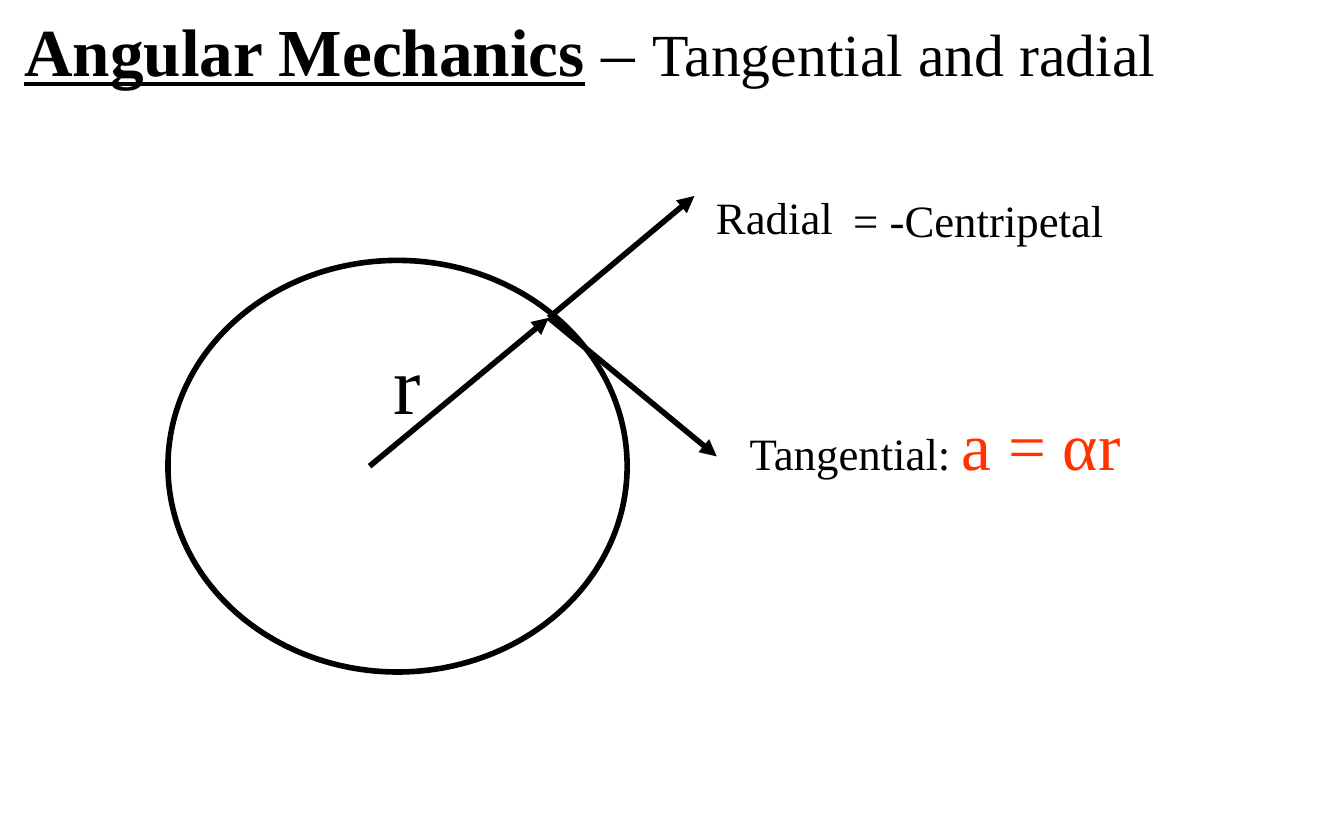
from lxml import etree
from pptx import Presentation
from pptx.dml.color import RGBColor
from pptx.enum.shapes import MSO_CONNECTOR, MSO_SHAPE
from pptx.enum.text import MSO_AUTO_SIZE
from pptx.oxml.ns import qn
from pptx.util import Pt

STRAIGHT = MSO_CONNECTOR.STRAIGHT
OVAL = MSO_SHAPE.OVAL
GROW = MSO_AUTO_SIZE.SHAPE_TO_FIT_TEXT

PX = 9525  # EMU per px, 96 px to the inch

THEME = {
    "font": "Times New Roman",
    "ink": RGBColor(0x00, 0x00, 0x00),
    "paper": RGBColor(0xFF, 0xFF, 0xFF),
    "accent": RGBColor(0xFF, 0x33, 0x00),
    "line": Pt(3),
    "title": {"size": Pt(36), "bold": True, "underline": True},
    "dash": {"size": Pt(36)},
    "subtitle": {"size": Pt(32)},
    "label": {"size": Pt(24)},
    "formula": {"size": Pt(36)},
    "space": {"size": Pt(18)},
    "radius": {"size": Pt(44)},
}


def add_label(shapes, box, runs):
    label = shapes.add_textbox(*(v * PX for v in box))
    frame = label.text_frame
    frame.word_wrap = False
    frame.auto_size = GROW
    for text, style in runs:
        run = frame.paragraphs[0].add_run()
        run.text = text
        for name, value in {"name": THEME["font"], **THEME[style]}.items():
            setattr(run.font, name, value)
        run.font.color.rgb = THEME["accent" if style == "formula" else "ink"]


def add_arrow(shapes, start, end):
    arrow = shapes.add_connector(STRAIGHT, *(v * PX for v in start + end))
    arrow.line.color.rgb = THEME["ink"]
    arrow.line.width = THEME["line"]
    etree.SubElement(arrow.line._get_or_add_ln(), qn("a:tailEnd"), type="triangle")
    etree.SubElement(arrow._element.spPr, qn("a:effectLst"))


prs = Presentation()
prs.slide_width, prs.slide_height = 960 * PX, 600 * PX
slide = prs.slides.add_slide(prs.slide_layouts[6])
slide.background.fill.solid()
slide.background.fill.fore_color.rgb = THEME["paper"]

# Title
add_label(slide.shapes, (8, 2, 835, 68), [
    ("Angular Mechanics", "title"),
    (" – ", "dash"),
    ("Tangential and radial", "subtitle"),
])

# Circular path
circle = slide.shapes.add_shape(OVAL, *(v * PX for v in (120, 186, 328, 294)))
circle.shadow.inherit = False
circle.fill.solid()
circle.fill.fore_color.rgb = THEME["paper"]
circle.line.color.rgb = THEME["ink"]
circle.line.width = THEME["line"]

# Radius, ending at the moving point
center, point = (264, 333), (392, 227)
add_arrow(slide.shapes, center, point)

# Radial and tangential directions, each grouped with its label
directions = [
    ((496, 140), (502, 131, 104, 48), [("Radial", "label")]),
    ((512, 326), (526, 283, 298, 68),
     [("Tangential: ", "label"), ("a = αr", "formula"), (" ", "space")]),
]
for tip, box, runs in directions:
    direction = slide.shapes.add_group_shape()
    add_arrow(direction.shapes, point, tip)
    add_label(direction.shapes, box, runs)

# Radius name and centripetal note
add_label(slide.shapes, (272, 233, 39, 81), [("r", "radius")])
add_label(slide.shapes, (600, 133, 200, 48), [("= -Centripetal", "label")])

prs.save("out.pptx")
